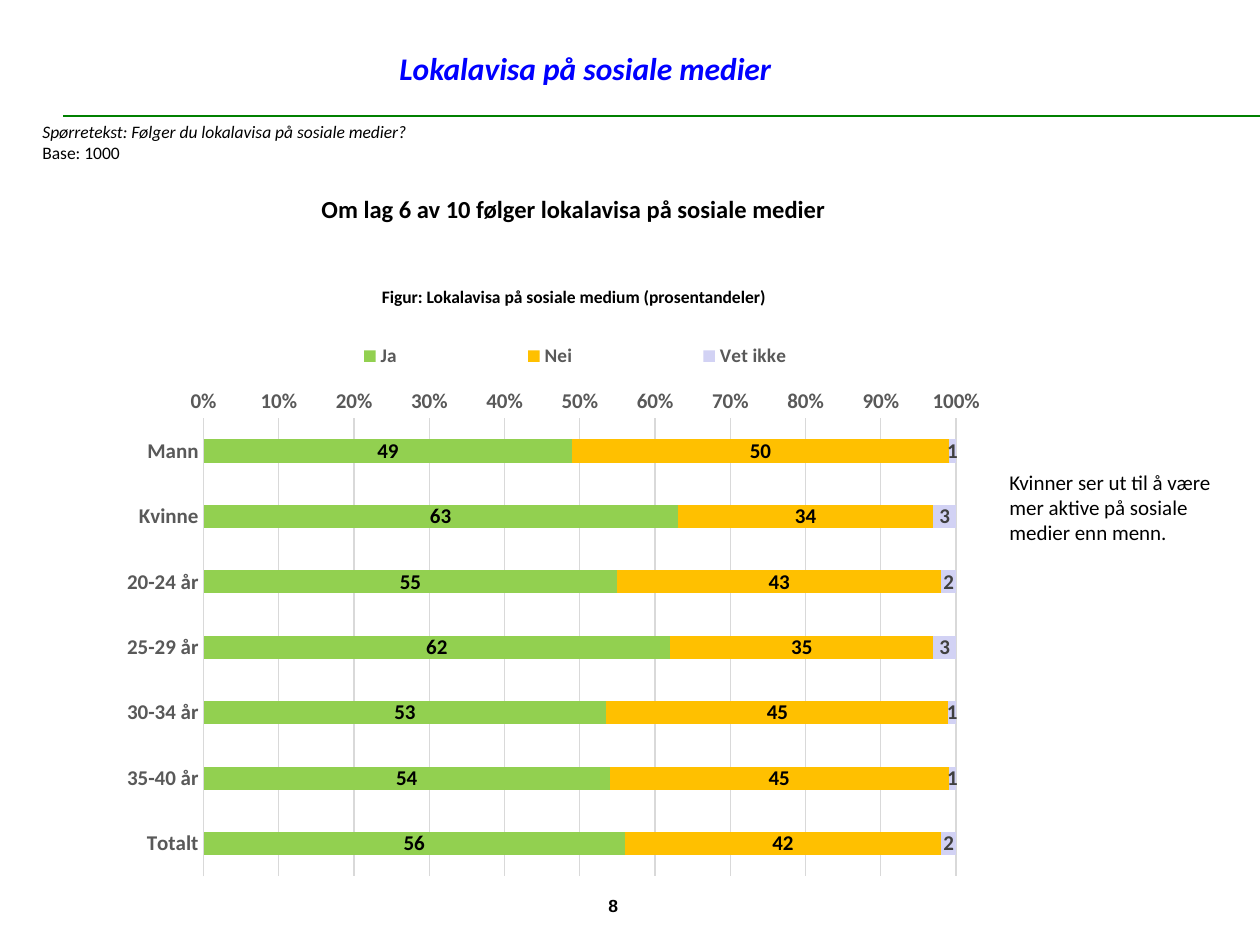
from lxml import etree
from pptx import Presentation
from pptx.chart.data import CategoryChartData
from pptx.dml.color import RGBColor
from pptx.enum.chart import (XL_CHART_TYPE, XL_LABEL_POSITION,
                             XL_LEGEND_POSITION, XL_TICK_MARK)
from pptx.enum.shapes import MSO_CONNECTOR
from pptx.enum.text import MSO_ANCHOR, PP_ALIGN
from pptx.oxml.ns import qn
from pptx.util import Emu, Pt

BAR = XL_CHART_TYPE.BAR_STACKED_100
LABEL_CENTER = XL_LABEL_POSITION.CENTER
LEGEND_TOP = XL_LEGEND_POSITION.TOP
NO_TICK = XL_TICK_MARK.NONE
STRAIGHT = MSO_CONNECTOR.STRAIGHT
MIDDLE, TOP = MSO_ANCHOR.MIDDLE, MSO_ANCHOR.TOP
LEFT, CENTER = PP_ALIGN.LEFT, PP_ALIGN.CENTER

PX = 914400 / 126
WIDTH, HEIGHT = 1260, 945
COLORS = {
    "text": "000000", "title": "0000FF", "rule": "008000",
    "axis": "595959", "grid": "D9D9D9", "muted": "404040",
    "ja": "92D050", "nei": "FFC000", "vet_ikke": "D2D2F4",
}
CATEGORIES = ["Mann", "Kvinne", "20-24 år", "25-29 år", "30-34 år",
              "35-40 år", "Totalt"]
SERIES = [
    ("Ja", [49, 63, 55, 62, 53, 54, 56], "ja", "text"),
    ("Nei", [50, 34, 43, 35, 45, 45, 42], "nei", "text"),
    ("Vet ikke", [1, 3, 2, 3, 1, 1, 2], "vet_ikke", "muted"),
]


def px(n):
    """Convert pixels to EMU."""
    return Emu(round(n * PX))


def rgb(name):
    """Look up a named colour."""
    return RGBColor.from_string(COLORS[name])


def set_font(font, size, color="text", bold=False, italic=False,
             name="Calibri"):
    """Set every font property used on the slide."""
    font.name, font.size = name, Pt(size)
    font.bold, font.italic = bold, italic
    font.color.rgb = rgb(color)


def add_text(slide, box, lines, align=LEFT, anchor=TOP, wrap=True):
    """Add a text box from (text, font settings) pairs and return its frame."""
    tf = slide.shapes.add_textbox(*map(px, box)).text_frame
    tf.word_wrap, tf.vertical_anchor = wrap, anchor
    for i, (text, font) in enumerate(lines):
        p = tf.add_paragraph() if i else tf.paragraphs[0]
        p.text, p.alignment = text, align
        set_font(p.font, **font)
    return tf


def add_header(slide, box):
    """Add the title, the rule and the question text."""
    x, y, w, h = box
    line = slide.shapes.add_connector(
        STRAIGHT, px(x + 63), px(y + h), px(x + w), px(y + h))
    line.line.color.rgb, line.line.width = rgb("rule"), Pt(1)
    etree.SubElement(line._element.spPr, qn("a:effectLst"))
    add_text(slide, (x + 387, y + 43, 650, 50),
             [("Lokalavisa på sosiale medier",
               dict(size=18, color="title", bold=True, italic=True))])
    add_text(slide, (x + 30, y + h - 1, w - 30, 55),
             [("Spørretekst: Følger du lokalavisa på sosiale medier?",
               dict(size=10, italic=True)),
              ("Base: 1000", dict(size=10))])


def add_headings(slide, box):
    """Add the main finding and the figure caption."""
    x, y, w, h = box
    for text, size, top, height in (
            ("Om lag 6 av 10 følger lokalavisa på sosiale medier", 14, 0, 43),
            ("Figur: Lokalavisa på sosiale medium (prosentandeler)", 10,
             h - 34, 34)):
        add_text(slide, (x, y + top, w, height),
                 [(text, dict(size=size, bold=True))], CENTER, MIDDLE, False)


def set_layout(parent, index, box, inner=False):
    """Give a chart part a fixed place as fractions of the chart."""
    for old in parent.findall(qn("c:layout")):
        parent.remove(old)
    layout = etree.Element(qn("c:layout"))
    parent.insert(index, layout)
    manual = etree.SubElement(layout, qn("c:manualLayout"))
    values = [("layoutTarget", "inner")] if inner else []
    values += [("xMode", "edge"), ("yMode", "edge"), *zip("xywh", box)]
    for tag, value in values:
        etree.SubElement(manual, qn("c:" + tag)).set("val", str(value))


def add_bars(slide, box):
    """Add the stacked bar chart."""
    data = CategoryChartData()
    data.categories = CATEGORIES
    for name, values, _, _ in SERIES:
        data.add_series(name, values)
    chart = slide.shapes.add_chart(BAR, *map(px, box), data).chart
    chart.has_title = False
    set_font(chart.font, 10, bold=True)

    plot = chart.plots[0]
    plot.gap_width, plot.overlap = 182, 100
    plot.vary_by_categories = False
    for series, (_, _, fill, label) in zip(plot.series, SERIES):
        series.format.fill.solid()
        series.format.fill.fore_color.rgb = rgb(fill)
        labels = series.data_labels
        labels.show_value, labels.position = True, LABEL_CENTER
        set_font(labels.font, 12, label, bold=True)

    cat, val = chart.category_axis, chart.value_axis
    for axis in (cat, val):
        axis.major_tick_mark = axis.minor_tick_mark = NO_TICK
        set_font(axis.tick_labels.font, 12, "axis", bold=True)
    cat.reverse_order = True
    val.has_major_gridlines = True
    for line in (cat.format.line, val.major_gridlines.format.line):
        line.color.rgb, line.width = rgb("grid"), Pt(0.75)
    val.format.line.fill.background()
    val.maximum_scale, val.major_unit = 1, 0.1
    val.tick_labels.number_format = "0%"
    val.tick_labels.number_format_is_linked = False

    chart.has_legend = True
    legend = chart.legend
    legend.position, legend.include_in_layout = LEGEND_TOP, False
    set_font(legend.font, 11, "axis", bold=True)
    set_layout(legend._element, 1, (0.15, 0.05, 0.75, 0.06))
    set_layout(chart._chartSpace.chart.plotArea, 0,
               (0.11, 0.19, 0.84, 0.81), inner=True)


def add_comment(slide, box):
    """Add the remark beside the chart."""
    add_text(slide, box,
             [("Kvinner ser ut til å være mer aktive på sosiale medier "
               "enn menn.", dict(size=12))])


def add_page_number(slide, box):
    """Add the page number."""
    tf = add_text(slide, box, [("8", dict(size=10, bold=True, name="Arial"))])
    tf.paragraphs[0].line_spacing = 0.5


def main():
    """Build and save the slide."""
    prs = Presentation()
    prs.slide_width, prs.slide_height = px(WIDTH), px(HEIGHT)
    slide = prs.slides.add_slide(prs.slide_layouts[6])
    add_header(slide, (0, 0, WIDTH, 116))
    add_headings(slide, (307, 187, 533, 127))
    add_bars(slide, (105, 311, 896, 566))
    add_comment(slide, (997, 463, 243, 89))
    add_page_number(slide, (596, 898, 117, 23))
    prs.save("out.pptx")


if __name__ == "__main__":
    main()
